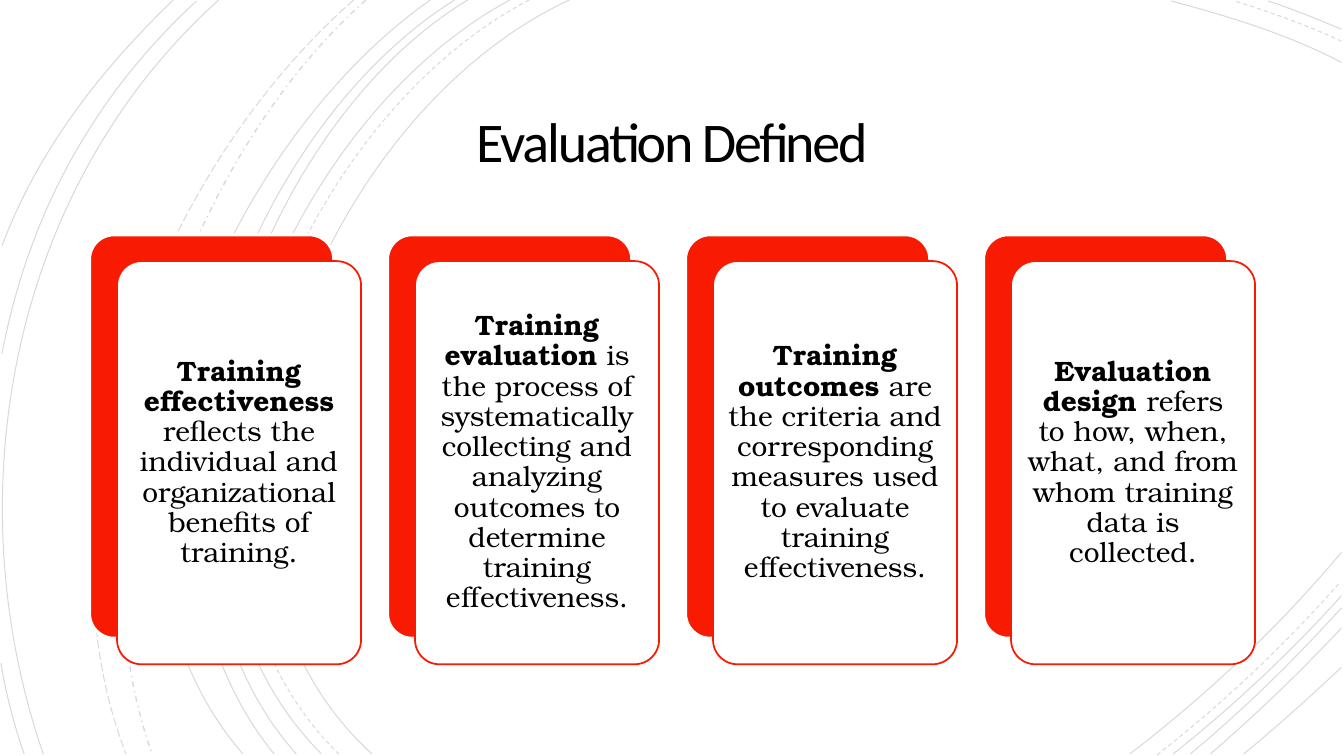
import dataclasses

import pptx
import pptx.dml.color
import pptx.enum.dml
import pptx.enum.shapes
import pptx.enum.text
import pptx.oxml
import pptx.oxml.ns
import pptx.util
from pptx.util import Cm, Pt


@dataclasses.dataclass(frozen=True)
class Theme:
    ink: str = "000000"
    paper: str = "FFFFFF"
    accent: str = "F81B02"
    title_font: str = "Calibri"
    body_font: str = "TeX Gyre Bonum"
    title_size: int = 40
    body_size: int = 20
    arc_opacity: int = 15


THEME = Theme()
DASH = pptx.enum.dml.MSO_LINE

# Background arcs: start, two control points and end, in hundredths of an inch
ARC_UNIT = Cm(0.0254)
SOLID_ARCS = [
    (565, 0, 315, 115, 143, 540, 369, 748),
    (1331, 62, 1278, 34, 1218, 16, 1162, 1),
    (1121, 748, 1197, 690, 1269, 622, 1331, 548),
    (506, 0, 270, 127, 110, 537, 319, 748),
    (1331, 29, 1307, 19, 1283, 9, 1258, 1),
    (1164, 748, 1223, 701, 1280, 648, 1331, 591),
    (464, 0, 244, 133, 110, 541, 294, 748),
    (1181, 748, 1234, 704, 1284, 655, 1331, 603),
    (451, 0, 231, 138, 97, 533, 272, 748),
    (1201, 748, 1246, 709, 1290, 667, 1331, 623),
    (427, 0, 217, 147, 53, 529, 241, 748),
    (1234, 748, 1267, 721, 1299, 692, 1331, 662),
    (217, 0, 11, 185, -46, 490, 43, 748),
    (195, 1, 92, 96, 28, 214, 2, 351),
    (1, 658, 6, 689, 14, 719, 24, 748),
    (172, 0, 100, 69, 37, 150, 2, 244),
]
DASHED_ARCS = [
    (525, 0, 285, 125, 123, 537, 336, 748),
    (1331, 41, 1297, 25, 1260, 12, 1225, 1),
    (1148, 749, 1213, 698, 1275, 640, 1330, 577),
]
DASH_DOT_ARCS = [(363, 0, 176, 166, 65, 509, 151, 748)]
LONG_DASH_ARCS = [(351, 0, 157, 169, 29, 499, 125, 748)]
ARC_STYLES = [
    (SOLID_ARCS, DASH.SOLID, 0.75),
    (DASHED_ARCS, DASH.DASH, 0.75),
    (DASH_DOT_ARCS, DASH.DASH_DOT, 1),
    (LONG_DASH_ARCS, DASH.LONG_DASH, 0.75),
]

# Each definition: bold term, then the rest of the sentence
DEFINITIONS = [
    ("Training effectiveness",
     " reflects the individual and organizational benefits of training."),
    ("Training evaluation",
     " is the process of systematically collecting and analyzing outcomes"
     " to determine training effectiveness."),
    ("Training outcomes ",
     "are the criteria and corresponding measures used to evaluate"
     " training effectiveness."),
    ("Evaluation design ",
     "refers to how, when, what, and from whom training data is collected."),
]
CARD_LEFT, CARD_TOP, CARD_PITCH = 2.26, 5.92, 7.51
CARD_WIDTH, CARD_HEIGHT = 6.15, 10.16
FRONT_DX, FRONT_DY = 0.69, 0.66


def rgb(value):
    return pptx.dml.color.RGBColor.from_string(value)


def set_format(obj, values):
    for name, value in values.items():
        setattr(obj, name, value)


def add_arc(s, points, dash, width):
    start, *rest = zip(points[::2], points[1::2])
    builder = s.shapes.build_freeform(*start, scale=ARC_UNIT)
    builder.add_line_segments(rest, close=False)
    sp = builder.convert_to_shape()
    sp.shadow.inherit = False
    sp.fill.background()
    set_format(sp.line, {"width": Pt(width), "dash_style": dash})
    sp.line.color.rgb = rgb(THEME.ink)
    # Turn the three segments into one cubic curve
    outline = sp._element.xpath(".//a:path")[0]
    curve = pptx.oxml.parse_xml(
        f"<a:cubicBezTo {pptx.oxml.ns.nsdecls('a')}/>")
    for segment in outline.xpath("a:lnTo"):
        curve.append(segment[0])
        outline.remove(segment)
    outline.append(curve)
    # Make the line faint
    color = sp._element.xpath(".//a:ln//a:srgbClr")[0]
    color.append(pptx.oxml.parse_xml(
        f"<a:alpha {pptx.oxml.ns.nsdecls('a')}"
        f" val='{THEME.arc_opacity * 1000}'/>"))


def add_text(sp, runs, font, size, inset, spacing):
    tf = sp.text_frame
    margins = dict.fromkeys(
        ("margin_left", "margin_top", "margin_right", "margin_bottom"),
        Cm(inset))
    set_format(tf, {
        "word_wrap": True,
        "vertical_anchor": pptx.enum.text.MSO_ANCHOR.MIDDLE, **margins})
    p = tf.paragraphs[0]
    set_format(p, {"alignment": pptx.enum.text.PP_ALIGN.CENTER,
                   "line_spacing": spacing})
    for text, bold in runs:
        r = p.add_run()
        r.text = text
        set_format(r.font, {"name": font, "size": Pt(size), "bold": bold})
        r.font.color.rgb = rgb(THEME.ink)
    return p


def add_title(s, text):
    sp = s.shapes.add_textbox(Cm(4.88), Cm(2.21), Cm(24.1), Cm(2.92))
    p = add_text(sp, [(text, False)], THEME.title_font, THEME.title_size,
                 inset=0.64, spacing=0.85)
    p.runs[0].font._element.set("spc", "-150")


def add_panel(s, left, top, fill, line, width):
    sp = s.shapes.add_shape(
        pptx.enum.shapes.MSO_SHAPE.ROUNDED_RECTANGLE,
        Cm(left), Cm(top), Cm(CARD_WIDTH), Cm(CARD_HEIGHT))
    sp.adjustments[0] = 0.1
    sp.shadow.inherit = False
    sp.fill.solid()
    sp.fill.fore_color.rgb = rgb(fill)
    sp.line.color.rgb = rgb(line)
    sp.line.width = Pt(width)
    return sp


def add_card(s, left, term, meaning):
    add_panel(s, left, CARD_TOP, THEME.accent, THEME.paper, 2)
    front = add_panel(s, left + FRONT_DX, CARD_TOP + FRONT_DY,
                      THEME.paper, THEME.accent, 1.25)
    add_text(front, [(term, True), (meaning, False)],
             THEME.body_font, THEME.body_size, inset=0.2, spacing=0.9)


def main():
    prs = pptx.Presentation()
    set_format(prs, {"slide_width": Cm(33.87), "slide_height": Cm(19.05)})
    s = prs.slides.add_slide(prs.slide_layouts[6])
    s.background.fill.solid()
    s.background.fill.fore_color.rgb = rgb(THEME.paper)

    # Background arcs
    for arcs, dash, width in ARC_STYLES:
        for points in arcs:
            add_arc(s, points, dash, width)

    # Title and definition cards
    add_title(s, "Evaluation Defined")
    for i, (term, meaning) in enumerate(DEFINITIONS):
        add_card(s, CARD_LEFT + i * CARD_PITCH, term, meaning)

    prs.save("out.pptx")


if __name__ == "__main__":
    main()
